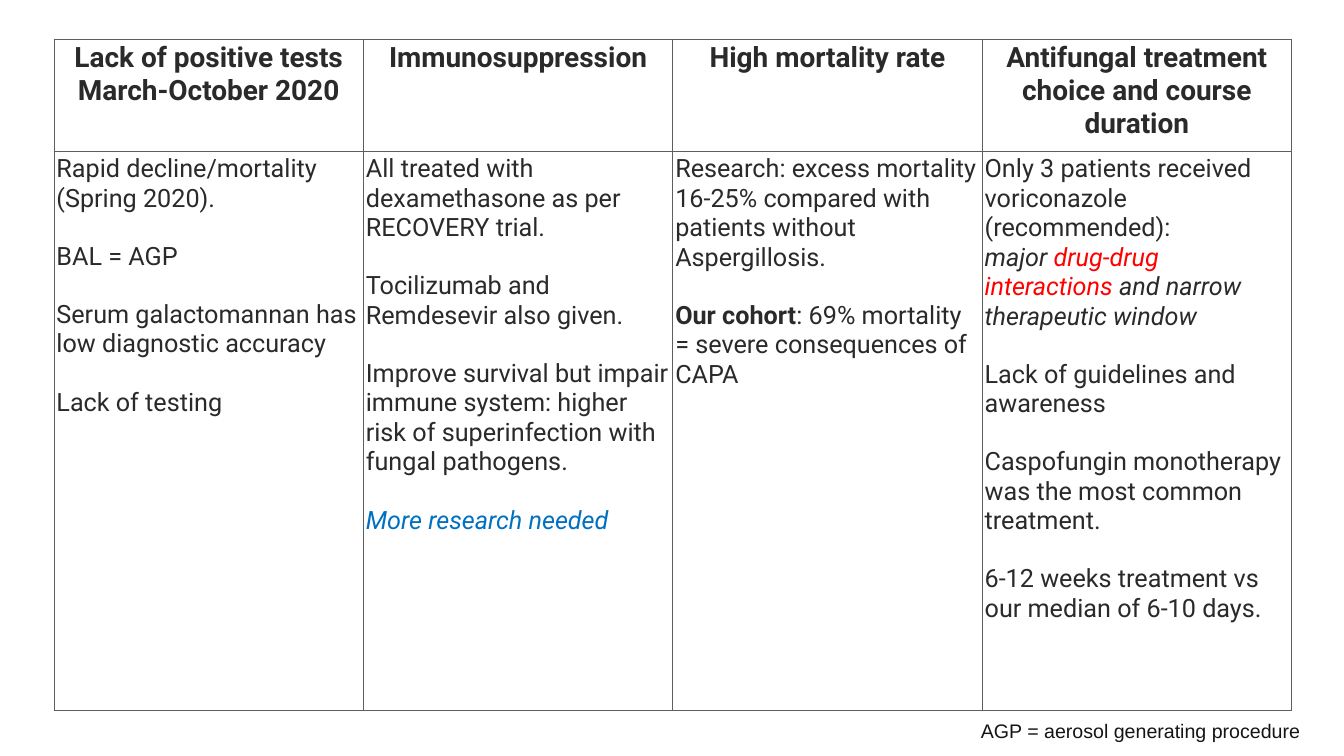
import pptx
import pptx.util
import pptx.dml.color
import pptx.enum.text
import pptx.oxml.ns
from dataclasses import dataclass
from lxml import etree

Inches = pptx.util.Inches
Pt = pptx.util.Pt
Align = pptx.enum.text.PP_ALIGN


@dataclass
class Theme:
    ink: str = "2A2A2A"
    red: str = "FF0000"
    blue: str = "0070C0"
    note: str = "151515"
    rule: str = "5E5E5E"
    font: str = "Roboto"
    plain: str = "Arial"
    head: int = 40
    body: int = 36
    foot: int = 28
    gap: int = 41


theme = Theme()


def add_run(para, text, size, color=theme.ink, font=theme.font, bold=False, italic=False):
    run = para.add_run()
    run.text = text
    run.font.size = Pt(size)
    run.font.name = font
    run.font.bold = bold
    run.font.italic = italic
    run.font.color.rgb = pptx.dml.color.RGBColor.from_string(color)


def style_cell(cell):
    cell.margin_left = cell.margin_right = Inches(0.05)
    cell.margin_top = cell.margin_bottom = Inches(0.05)
    props = cell._tc.get_or_add_tcPr()
    qn = pptx.oxml.ns.qn
    for side in ("lnL", "lnR", "lnT", "lnB"):
        line = etree.SubElement(props, qn("a:" + side), w=str(Pt(1)))
        fill = etree.SubElement(line, qn("a:solidFill"))
        etree.SubElement(fill, qn("a:srgbClr"), val=theme.rule)
    cell.fill.background()


plain = {}
bold = {"bold": True}
slant = {"italic": True}
warn = {"italic": True, "color": theme.red}
call = {"italic": True, "color": theme.blue}

columns = [
    ("Lack of positive tests March-October 2020", [
        [("Rapid decline/mortality (Spring 2020).", plain)],
        [("BAL = AGP", plain)],
        [("Serum galactomannan has low diagnostic accuracy", plain)],
        [("Lack of testing", plain)],
    ]),
    ("Immunosuppression", [
        [("All treated with dexamethasone as per RECOVERY trial.", plain)],
        [("Tocilizumab and Remdesevir also given.", plain)],
        [("Improve survival but impair immune system: higher risk of "
          "superinfection with fungal pathogens.", plain)],
        [("More research needed", call)],
    ]),
    ("High mortality rate", [
        [("Research: excess mortality 16-25% compared with patients "
          "without Aspergillosis.", plain)],
        [("Our cohort", bold),
         (": 69% mortality = severe consequences of CAPA", plain)],
    ]),
    ("Antifungal treatment choice and course duration", [
        [("Only 3 patients received voriconazole (recommended):", plain)],
        [("major ", slant), ("drug-drug interactions ", warn),
         ("and narrow therapeutic window", slant)],
        [("Lack of guidelines and awareness", plain)],
        [("Caspofungin monotherapy was the most common treatment.", plain)],
        [("6-12 weeks treatment vs our median of 6-10 days.", plain)],
    ]),
]

deck = pptx.Presentation()
deck.slide_width = Inches(26.67)
deck.slide_height = Inches(15)
slide = deck.slides.add_slide(deck.slide_layouts[6])

frame = slide.shapes.add_table(2, len(columns), Inches(1.07), Inches(0.78),
                               Inches(24.56), Inches(13.31))
table = frame.table
table.first_row = False
table.horz_banding = False
table.rows[0].height = Inches(2.23)
table.rows[1].height = Inches(11.08)

for col, (title, paras) in enumerate(columns):
    table.columns[col].width = Inches(6.14)
    head, body = table.cell(0, col), table.cell(1, col)
    style_cell(head)
    style_cell(body)

    para = head.text_frame.paragraphs[0]
    para.alignment = Align.CENTER
    add_run(para, title, theme.head, bold=True)

    for row, runs in enumerate(paras):
        para = body.text_frame.add_paragraph() if row else body.text_frame.paragraphs[0]
        para.alignment = Align.LEFT
        joined = runs[0][1] is slant
        para.space_before = Pt(theme.gap if row and not joined else 0)
        for text, look in runs:
            add_run(para, text, theme.body, **look)

note = slide.shapes.add_textbox(Inches(19.37), Inches(14.22), Inches(6.52), Inches(0.57))
text = note.text_frame
text.word_wrap = False
text.auto_size = pptx.enum.text.MSO_AUTO_SIZE.SHAPE_TO_FIT_TEXT
text.margin_left = text.margin_right = Inches(0.05)
text.margin_top = text.margin_bottom = Inches(0.05)
para = text.paragraphs[0]
para.alignment = Align.CENTER
add_run(para, "AGP = aerosol generating procedure", theme.foot, theme.note, theme.plain)

deck.save("out.pptx")
